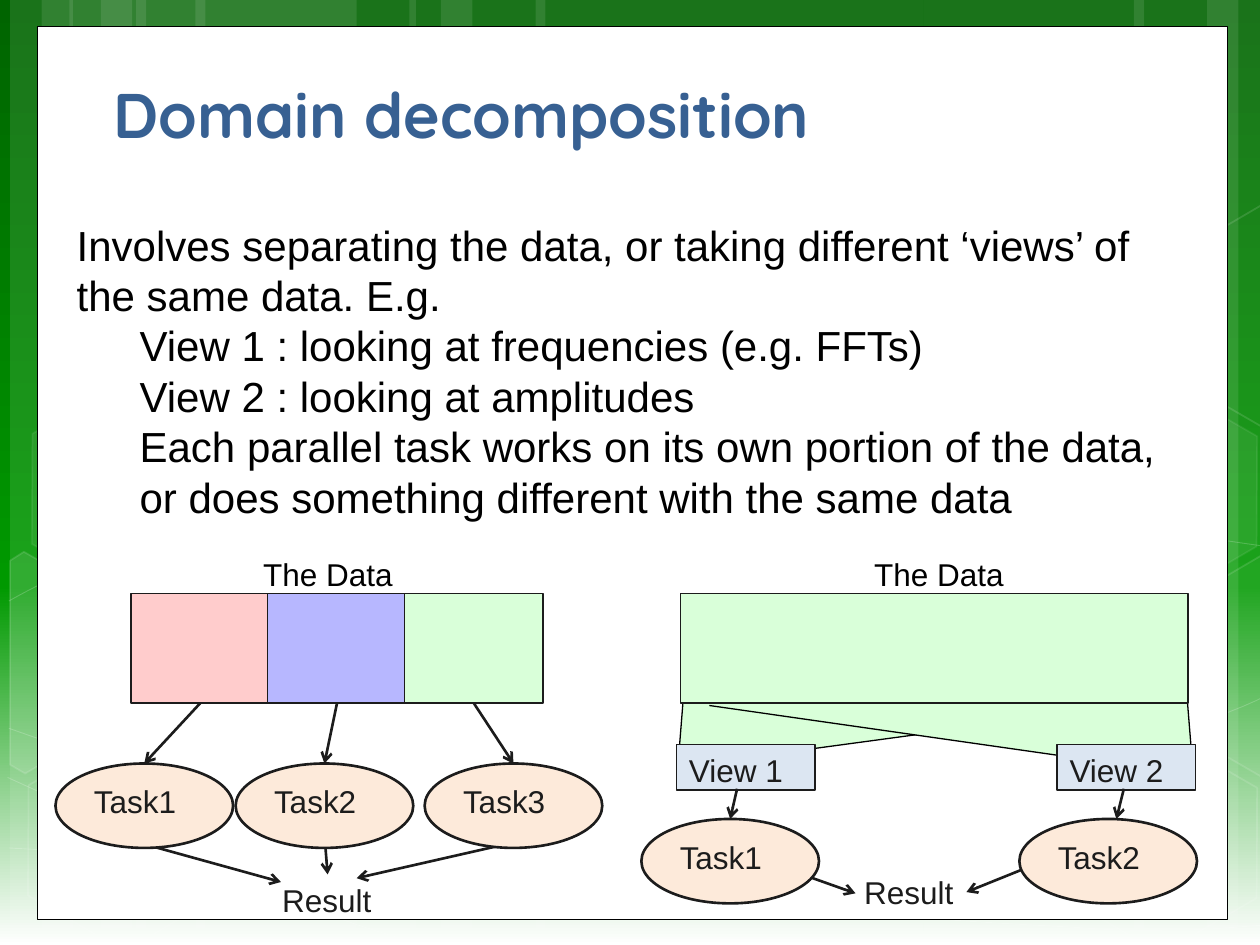
from lxml import etree
from pptx import Presentation
from pptx.dml.color import RGBColor
from pptx.enum import shapes as sh, text as tx
from pptx.oxml import ns
from pptx.util import Inches, Pt

WHITE = RGBColor(0xFF, 0xFF, 0xFF)
BLACK = RGBColor(0, 0, 0)
INK = RGBColor(0x1C, 0x1C, 0x1C)
BLUE = RGBColor(0x37, 0x60, 0x92)
PINK = RGBColor(0xFF, 0xCC, 0xCC)
LILAC = RGBColor(0xB7, 0xB7, 0xFF)
MINT = RGBColor(0xD9, 0xFF, 0xD9)
PEACH = RGBColor(0xFD, 0xEA, 0xDA)
PALE = RGBColor(0xDC, 0xE6, 0xF2)
DARK = RGBColor(0, 0x64, 0)
GREEN = RGBColor(0, 0x99, 0)
RECT, OVAL, HEX = sh.MSO_SHAPE.RECTANGLE, sh.MSO_SHAPE.OVAL, sh.MSO_SHAPE.HEXAGON

# Bezier chains: a start point, then three points for each curve
CURVES = [
    [(0.07, 6.73), (0.61, 6.76), (1.15, 6.79), (1.9, 6.78), (2.65, 6.77),
     (3.58, 6.75), (4.58, 6.65), (5.58, 6.55), (7, 6.36), (7.92, 6.17),
     (8.83, 5.98), (9.77, 5.68), (10.07, 5.51)],
    [(0.07, 4.77), (0.36, 4.61), (0.65, 4.46), (1.21, 4.31), (1.78, 4.16),
     (2.59, 3.94), (3.47, 3.87), (4.36, 3.8), (5.44, 3.79), (6.54, 3.87),
     (7.64, 3.95), (9.47, 4.26), (10.07, 4.34)],
    [(0.06, 6.17), (1.27, 6.72), (2.47, 7.27), (3.34, 7.49)],
    [(0.07, 5.78), (0.38, 5.89), (0.7, 6), (1.28, 6.16), (1.86, 6.31),
     (2.73, 6.56), (3.57, 6.73), (4.4, 6.9), (5.45, 7.08), (6.28, 7.18),
     (7.11, 7.29), (8, 7.33), (8.53, 7.36), (9.05, 7.4), (9.19, 7.38),
     (9.45, 7.38), (9.71, 7.37), (9.89, 7.35), (10.07, 7.34)],
]


def fade(fill, pct):
    """Set the opacity of a solid fill in percent."""
    color = fill._xPr.find(".//" + ns.qn("a:srgbClr"))
    etree.SubElement(color, ns.qn("a:alpha"), val=str(pct * 1000))


def style(item, fill=None, line=None, width=0.75, alpha=None, edge=None):
    item.shadow.inherit = False
    for part, color, pct in ((item.fill, fill, alpha), (item.line.fill, line, edge)):
        if color is None:
            part.background()
        else:
            part.solid()
            part.fore_color.rgb = color
            if pct:
                fade(part, pct)
    if line is not None:
        item.line.width = Pt(width)
    return item


def write(item, lines, size=18, font="Arial", color=INK, bold=False,
          wrap=True, anchor=tx.MSO_ANCHOR.TOP, indents=()):
    frame = item.text_frame
    frame.word_wrap, frame.vertical_anchor = wrap, anchor
    for i, line in enumerate(lines):
        para = frame.paragraphs[0] if i == 0 else frame.add_paragraph()
        para.alignment = tx.PP_ALIGN.LEFT
        if indents:
            props = para._p.get_or_add_pPr()
            props.set("marL", str(Inches(indents[i])))
            props.set("indent", "0")
        run = para.add_run()
        run.text = line
        run.font.size, run.font.name, run.font.bold = Pt(size), font, bold
        run.font.color.rgb = color


def shape(slide, kind, x, y, w, h, **look):
    item = slide.shapes.add_shape(kind, Inches(x), Inches(y), Inches(w), Inches(h))
    return style(item, **look)


def label(slide, words, x, y, w, h, **look):
    box = slide.shapes.add_textbox(Inches(x), Inches(y), Inches(w), Inches(h))
    write(box, words, **look)


def outline(slide, points, close=False, **look):
    dots = [(Inches(x), Inches(y)) for x, y in points]
    pen = slide.shapes.build_freeform(*dots[0])
    pen.add_line_segments(dots[1:], close=close)
    return style(pen.convert_to_shape(), **look)


def arrow(slide, x1, y1, x2, y2):
    link = slide.shapes.add_connector(
        sh.MSO_CONNECTOR.STRAIGHT, *(Inches(n) for n in (x1, y1, x2, y2)))
    link.line.color.rgb, link.line.width = INK, Pt(1.5)
    etree.SubElement(link.line._get_or_add_ln(), ns.qn("a:tailEnd"), type="arrow")
    etree.SubElement(link._element.spPr, ns.qn("a:effectLst"))
    return link


def bezier(chain, steps=12):
    dots = [chain[0]]
    for i in range(0, len(chain) - 1, 3):
        for t in (n / steps for n in range(1, steps + 1)):
            mix = ((1 - t) ** 3, 3 * t * (1 - t) ** 2, 3 * t * t * (1 - t), t ** 3)
            dots.append(tuple(sum(m * p[k] for m, p in zip(mix, chain[i:i + 4]))
                              for k in (0, 1)))
    return dots


def backdrop(slide, w, h):
    fill = slide.background.fill
    fill.gradient()
    fill.gradient_angle = 270
    stops = slide.background._cSld.find(".//" + ns.qn("a:gsLst"))
    for stop in list(stops):
        stops.remove(stop)
    for pos, color in ((0, DARK), (62, GREEN), (100, WHITE)):
        stop = etree.SubElement(stops, ns.qn("a:gs"), pos=str(pos * 1000))
        etree.SubElement(stop, ns.qn("a:srgbClr"), val=str(color))

    for x, wide in ((1.08, 1.75), (0.08, 0.5), (0.33, 0.83), (1.55, 1.75),
                    (0.55, 0.5), (0.8, 0.83), (7.33, 1.75), (9.58, 0.5),
                    (9, 0.83), (4.25, 3.08), (3.25, 0.5), (3.5, 0.83)):
        shape(slide, RECT, x, 0, wide, h, fill=WHITE, alpha=10)
    for chain in CURVES:
        outline(slide, bezier(chain), line=WHITE, width=0.5, edge=20)
    for x, y, tint in ((0.11, 5.91, None), (0.14, 3.12, 7),
                       (8.34, 5.93, None), (8.34, 3.14, 7)):
        cell = shape(slide, HEX, x, y, 1.75, 1.52, fill=WHITE if tint else None,
                     alpha=tint, line=WHITE, width=1, edge=8 if tint else 12)
        cell.adjustments[0] = 0.285
        cell.rotation = 30
    left = [(0.08, 4.45), (0.19, 4.38), (0.96, 4.82), (0.95, 5.7), (0.2, 6.14), (0.08, 6.07)]
    right = [(9.26, 2.07), (10.01, 1.63), (10.1, 1.68), (10.09, 3.35), (10.02, 3.39), (9.26, 2.95)]
    low = [(x, y + 2.78) for x, y in right]
    for points, tint in ((left, 10), (low, 4), (right, None)):
        outline(slide, points, close=True, fill=WHITE if tint else None,
                alpha=tint, line=WHITE, width=1, edge=12)
    shape(slide, RECT, 0.3, 0.21, w - 0.56, h - 0.41, fill=WHITE, line=BLACK, width=0.5)


def task(slide, name, x, y):
    oval = shape(slide, OVAL, x, y, 1.41, 0.67, fill=PEACH, line=INK, width=1.5)
    write(oval, [name])
    return oval


def split(slide, x, y):
    """Data cut in three portions, one task for each."""
    label(slide, ["The Data"], x + 1.55, y, 1.24, 0.4, color=BLACK, wrap=False)
    label(slide, ["Result"], x + 1.7, y + 2.58, 0.92, 0.4, wrap=False)
    for x1, x2, y2 in ((0.67, 1.79, 2.64), (2.14, 2.16, 2.58), (3.62, 2.39, 2.61)):
        arrow(slide, x + x1, y + 2.33, x + x2, y + y2)
    for i, (color, left) in enumerate(((PINK, 0), (LILAC, 1.43), (MINT, 2.93))):
        part = shape(slide, RECT, x + 0.6 + i * 1.085, y + 0.35, 1.1, 0.87,
                     fill=color, line=INK)
        oval = task(slide, f"Task{i + 1}", x + left, y + 1.7)
        link = arrow(slide, 0, 0, 1, 1)
        link.begin_connect(part, 2)
        link.end_connect(oval, 0)


def views(slide, x, y):
    """The same data seen in two ways, one task for each."""
    label(slide, ["The Data"], x + 1.75, y, 1.24, 0.4, color=BLACK, wrap=False)
    label(slide, ["Result"], x + 1.67, y + 2.52, 0.92, 0.4, wrap=False)
    for fan in ([(0.34, 1.1), (0.3, 1.6), (1.38, 1.58), (4.34, 1.18)],
                [(4.33, 1.15), (4.37, 1.65), (3.34, 1.64), (0.54, 1.24)]):
        outline(slide, [(x + a, y + b) for a, b in fan], fill=MINT, line=BLACK)
    for x1, y1, x2, y2 in ((0.91, 2.45, 1.7, 2.73), (3.2, 2.47, 2.58, 2.72)):
        arrow(slide, x + x1, y + y1, x + x2, y + y2)
    for i, (left, start, side) in enumerate(((0.28, 0.76, 0), (3.3, 3.83, 3)), 1):
        view = shape(slide, RECT, x + left, y + 1.55, 1.1, 0.36, fill=PALE, line=INK)
        write(view, [f"View {i}"])
        oval = task(slide, f"Task{i}", x + side, y + 2.14)
        link = arrow(slide, x + start, y + 1.9, x + start - 0.06, y + 2.14)
        if i == 1:
            link.end_connect(oval, 0)
    shape(slide, RECT, x + 0.31, y + 0.35, 4.03, 0.87, fill=MINT, line=INK)


def main():
    deck = Presentation()
    deck.slide_width, deck.slide_height = Inches(10), Inches(7.5)
    slide = deck.slides.add_slide(deck.slide_layouts[6])
    backdrop(slide, 10, 7.5)
    label(slide, ["Domain decomposition"], 0.8, 0.49, 8.42, 0.76, size=36,
          font="Quicksand", color=BLUE, bold=True, anchor=tx.MSO_ANCHOR.BOTTOM)
    label(slide, [
        "Involves separating the data, or taking different ‘views’ of the same data. E.g.",
        "View 1 : looking at frequencies (e.g. FFTs)",
        "View 2 : looking at amplitudes",
        "Each parallel task works on its own portion of the data, "
        "or does something different with the same data",
    ], 0.51, 1.69, 8.99, 2.52, size=24, color=BLACK, indents=(0, 0.5, 0.5, 0.5))
    split(slide, 0.44, 4.36)
    views(slide, 5.09, 4.36)
    deck.save("out.pptx")


if __name__ == "__main__":
    main()
